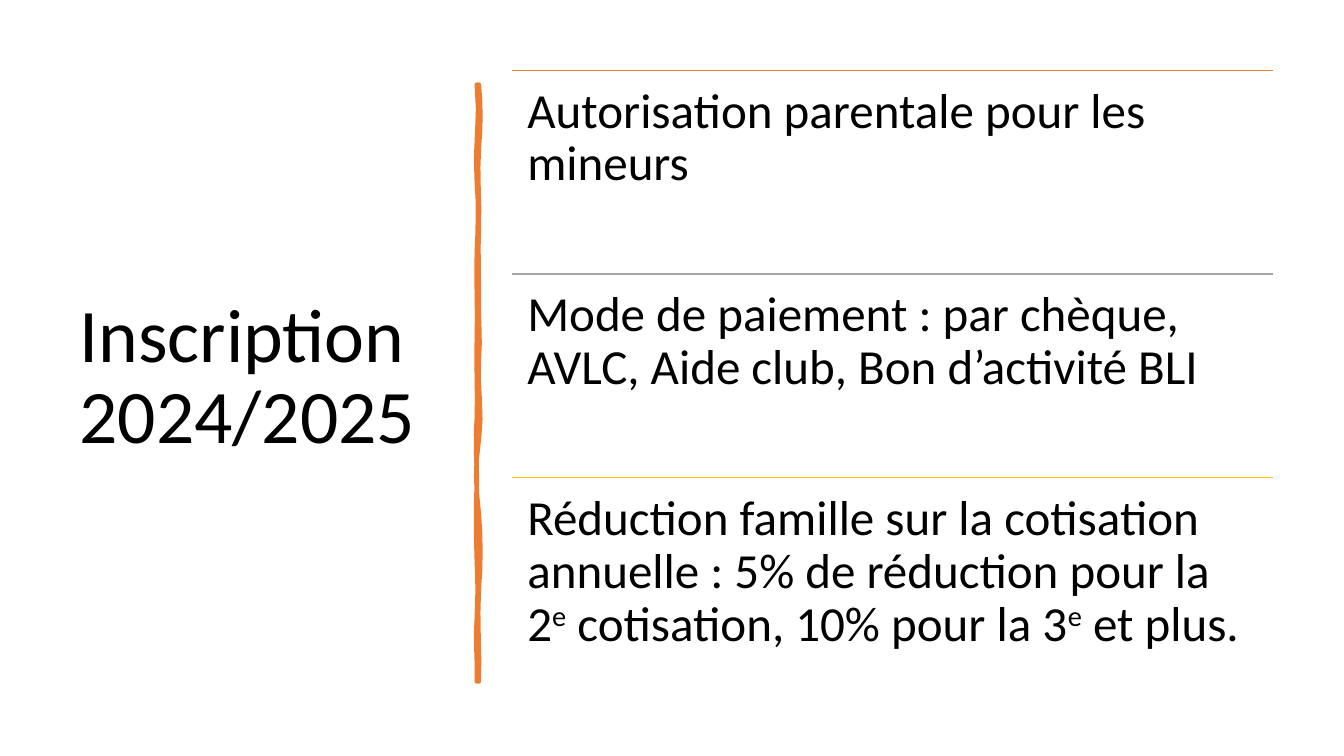
"""Build the registration slide: title, brushed divider and three ruled points."""
from dataclasses import dataclass

from lxml.etree import SubElement
from pptx import Presentation
from pptx.dml.color import RGBColor
from pptx.enum.shapes import MSO_CONNECTOR as Connector
from pptx.enum.text import MSO_ANCHOR as Anchor, MSO_AUTO_SIZE as AutoSize, PP_ALIGN as Align
from pptx.oxml.ns import qn
from pptx.slide import Slide
from pptx.text.text import TextFrame
from pptx.util import Inches, Pt

COLORS = {"text": "000000", "orange": "ED7D31", "grey": "A5A5A5", "gold": "FFC000"}
COLUMN = ROW = Inches(1)
TOP = 0.7
POINT_LEFT, POINT_WIDTH, POINT_HEIGHT = 5.08, 7.55, 2.02
BRUSH_TOP, BRUSH_LEFT, BRUSH_RIGHT = 0.84, 4.73, 4.75
CURVE_STEPS = 4


@dataclass
class Point:
    text: str
    rule: str


@dataclass
class Wave:
    end: float
    first_bend: float
    second_bend: float


POINTS = [
    Point("Autorisation parentale pour les mineurs", "orange"),
    Point("Mode de paiement : par chèque, AVLC, Aide club, Bon d’activité BLI", "grey"),
    Point("Réduction famille sur la cotisation annuelle : 5% de réduction pour la "
          "2^e^ cotisation, 10% pour la 3^e^ et plus.", "gold"),
]
RIGHT_WAVES = [
    Wave(1.46, 0.02, 0.02), Wave(2.26, -0.02, 0.01), Wave(2.94, -0.01, 0),
    Wave(3.56, -0.01, 0.02), Wave(4.36, -0.02, 0.04), Wave(5.1, -0.04, -0.03),
    Wave(5.84, 0.02, 0.02), Wave(6.76, -0.02, 0.01),
]
LEFT_WAVES = [
    Wave(6.13, 0.01, -0.02), Wave(5.57, 0.01, 0.01), Wave(4.77, -0.01, -0.01),
    Wave(4.15, 0, -0.02), Wave(3.35, 0.01, -0.01), Wave(2.5, 0.01, -0.01),
    Wave(1.81, 0.01, 0.02), Wave(BRUSH_TOP, -0.03, 0.04),
]


def cols(count: float) -> int:
    return round(count * COLUMN)


def rows(count: float) -> int:
    return round(count * ROW)


def rgb(color: str) -> RGBColor:
    return RGBColor.from_string(COLORS[color])


def write(frame: TextFrame, text: str, *, size: float, anchor: Anchor = Anchor.TOP,
          color: str = "text", font: str = "Calibri", inset: float | None = None) -> None:
    frame.word_wrap = True
    frame.auto_size = AutoSize.NONE
    frame.vertical_anchor = anchor
    if inset is not None:
        frame.margin_left = frame.margin_right = cols(inset)
        frame.margin_top = frame.margin_bottom = rows(inset)
    paragraph = frame.paragraphs[0]
    paragraph.alignment = Align.LEFT
    paragraph.line_spacing = 0.9
    for index, part in enumerate(text.split("^")):
        run = paragraph.add_run()
        run.text = part
        run.font.size = Pt(size)
        run.font.name = font
        run.font.color.rgb = rgb(color)
        if index % 2:
            run._r.get_or_add_rPr().set("baseline", "30000")


def trace(edge: float, start: float, waves: list[Wave]) -> list[tuple[int, int]]:
    outline = []
    for wave in waves:
        for step in range(1, CURVE_STEPS + 1):
            t = step / CURVE_STEPS
            bend = 3 * t * (1 - t) * ((1 - t) * wave.first_bend + t * wave.second_bend)
            outline.append((cols(edge + bend), rows(start + t * (wave.end - start))))
        start = wave.end
    return outline


def draw_divider(slide: Slide) -> None:
    bottom = RIGHT_WAVES[-1].end
    builder = slide.shapes.build_freeform(cols(BRUSH_RIGHT), rows(BRUSH_TOP))
    builder.add_line_segments(
        trace(BRUSH_RIGHT, BRUSH_TOP, RIGHT_WAVES)
        + [(cols(BRUSH_LEFT), rows(bottom))]
        + trace(BRUSH_LEFT, bottom, LEFT_WAVES))
    divider = builder.convert_to_shape()
    divider.shadow.inherit = False
    divider.fill.solid()
    divider.fill.fore_color.rgb = rgb("orange")
    divider.line.color.rgb = rgb("orange")
    divider.line.width = Pt(3.25)
    SubElement(divider.line._get_or_add_ln(), qn("a:round"))


def draw_point(slide: Slide, point: Point, top: float) -> None:
    rule = slide.shapes.add_connector(
        Connector.STRAIGHT, cols(POINT_LEFT), rows(top),
        cols(POINT_LEFT + POINT_WIDTH), rows(top))
    rule.line.color.rgb = rgb(point.rule)
    rule.line.width = Pt(1)
    SubElement(rule._element.spPr, qn("a:effectLst"))
    body = slide.shapes.add_textbox(
        cols(POINT_LEFT), rows(top), cols(POINT_WIDTH), rows(POINT_HEIGHT))
    write(body.text_frame, point.text, size=35, inset=0.15)


def main() -> None:
    deck = Presentation()
    deck.slide_width, deck.slide_height = cols(13.33), rows(7.5)
    slide = deck.slides.add_slide(deck.slide_layouts[5])
    title = slide.shapes.title
    title.left, title.top = cols(0.69), rows(TOP)
    title.width, title.height = cols(3.74), rows(6.11)
    write(title.text_frame, "Inscription 2024/2025", size=54, anchor=Anchor.MIDDLE)
    draw_divider(slide)
    for index, point in enumerate(POINTS):
        draw_point(slide, point, TOP + index * POINT_HEIGHT)
    deck.save("out.pptx")


if __name__ == "__main__":
    main()
